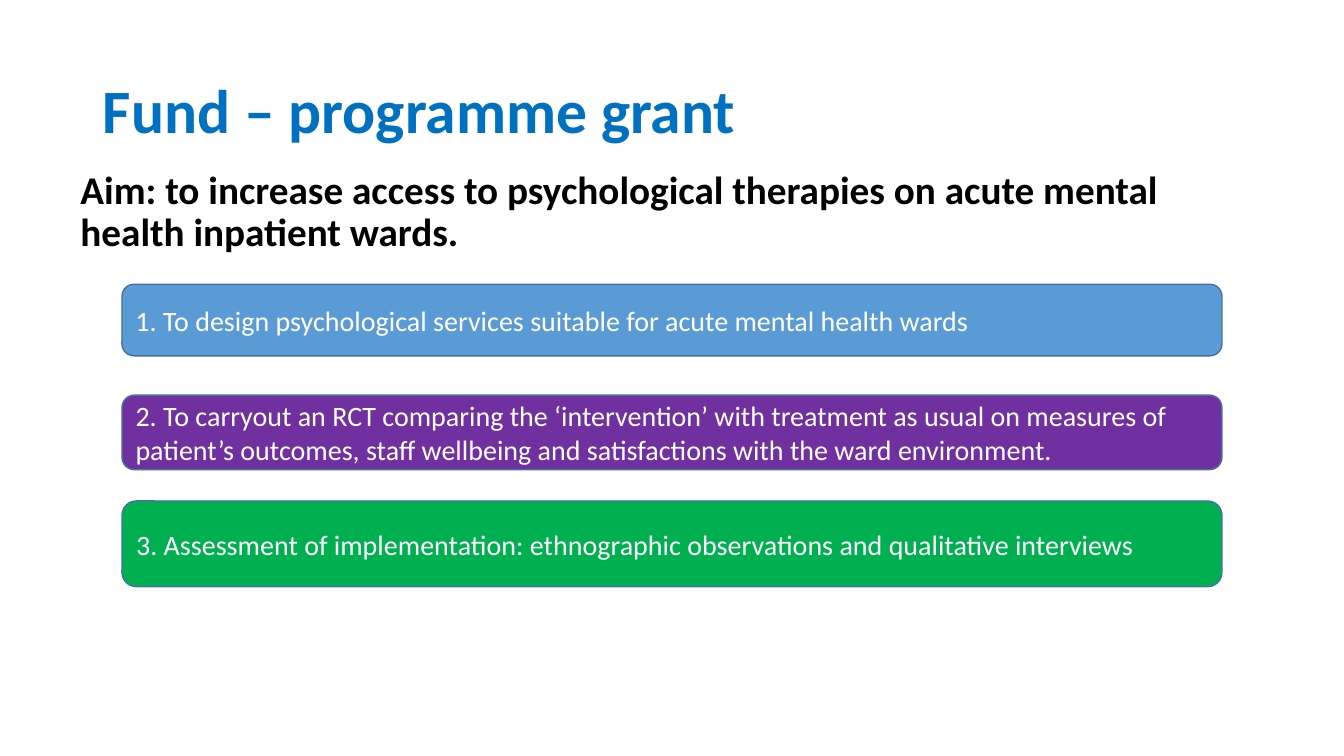
from dataclasses import dataclass

from pptx import Presentation
from pptx import util as u
from pptx.dml.color import RGBColor
from pptx.enum import shapes, text


@dataclass(frozen=True)
class Theme:
    font: str = "Calibri"
    title_size: int = 44
    aim_size: int = 28
    objective_size: int = 20
    title_color: str = "0070C0"
    aim_color: str = "000000"
    objective_color: str = "FFFFFF"
    outline: str = "43739E"


@dataclass(frozen=True)
class Objective:
    wording: str
    top: float
    height: float
    fill: str


THEME = Theme()
OBJECTIVE_LEFT = 1.21
OBJECTIVE_WIDTH = 10.91
OBJECTIVES = [
    Objective("1. To design psychological services suitable for acute mental health wards",
              2.82, 0.71, "5B9BD5"),
    Objective("2. To carryout an RCT comparing the ‘intervention’ with treatment as usual "
              "on measures of patient’s outcomes, staff wellbeing and satisfactions with "
              "the ward environment.", 3.92, 0.74, "7030A0"),
    Objective("3. Assessment of implementation: ethnographic observations and qualitative "
              "interviews", 4.97, 0.85, "00B050"),
]


def write(shape, wording: str, size: int, color: str, bold: bool = False,
          anchor=text.MSO_ANCHOR.MIDDLE, spacing: float = 1.0) -> None:
    frame = shape.text_frame
    frame.word_wrap = True
    frame.auto_size = text.MSO_AUTO_SIZE.NONE
    frame.vertical_anchor = anchor
    paragraph = frame.paragraphs[0]
    paragraph.alignment = text.PP_ALIGN.LEFT
    paragraph.line_spacing = spacing
    run = paragraph.add_run()
    run.text = wording
    run.font.name = THEME.font
    run.font.size = u.Pt(size)
    run.font.bold = bold
    run.font.color.rgb = RGBColor.from_string(color)


def add_title(slide, wording: str) -> None:
    title = slide.shapes.title
    title.left, title.top = u.Inches(0.92), u.Inches(0.4)
    title.width, title.height = u.Inches(11.5), u.Inches(1.45)
    write(title, wording, THEME.title_size, THEME.title_color, bold=True, spacing=0.9)


def add_aim(slide, wording: str) -> None:
    aim = slide.shapes.add_textbox(u.Inches(0.7), u.Inches(1.64), u.Inches(11.5), u.Inches(4.76))
    write(aim, wording, THEME.aim_size, THEME.aim_color, bold=True,
          anchor=text.MSO_ANCHOR.TOP, spacing=0.9)


def add_objective(slide, objective: Objective) -> None:
    box = slide.shapes.add_shape(
        shapes.MSO_SHAPE.ROUNDED_RECTANGLE,
        u.Inches(OBJECTIVE_LEFT), u.Inches(objective.top),
        u.Inches(OBJECTIVE_WIDTH), u.Inches(objective.height))
    box.shadow.inherit = False
    box.fill.solid()
    box.fill.fore_color.rgb = RGBColor.from_string(objective.fill)
    box.line.color.rgb = RGBColor.from_string(THEME.outline)
    box.line.width = u.Pt(1)
    write(box, objective.wording, THEME.objective_size, THEME.objective_color)


def main() -> None:
    presentation = Presentation()
    presentation.slide_width = u.Inches(13.33)
    presentation.slide_height = u.Inches(7.5)
    slide = presentation.slides.add_slide(presentation.slide_layouts.get_by_name("Title Only"))
    add_title(slide, "Fund – programme grant")
    add_aim(slide, "Aim: to increase access to psychological therapies on acute mental "
                   "health inpatient wards.")
    for objective in OBJECTIVES:
        add_objective(slide, objective)
    presentation.save("out.pptx")


if __name__ == "__main__":
    main()
